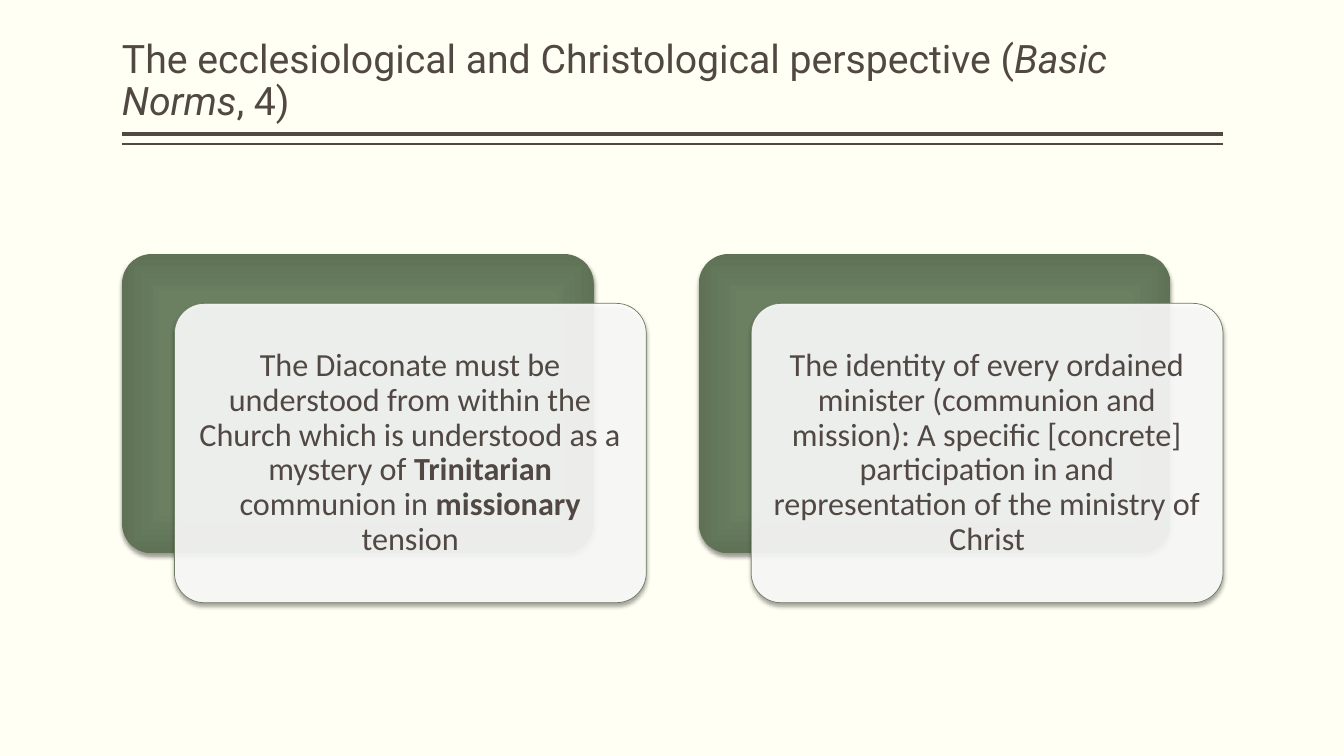
"""Build the slide on the ecclesiological and Christological perspective."""
from lxml import etree
from pptx import Presentation
from pptx.dml.color import RGBColor
from pptx.enum.shapes import MSO_CONNECTOR, MSO_SHAPE
from pptx.enum.text import MSO_ANCHOR, PP_ALIGN
from pptx.oxml import parse_xml
from pptx.oxml.ns import nsdecls, qn
from pptx.util import Inches, Pt

INK, PAPER, WHITE, EDGE = "514843", "FFFFF3", "FFFFFF", "6D7D66"
GREEN_STOPS = [(0, "6B8162"), (71, "6A8061"), (100, "5F7256")]
TITLE = [("The ecclesiological and Christological perspective (", ""),
         ("Basic Norms", "i"), (", 4)", "")]
CARDS = [
    [("The Diaconate must be understood from within the Church which is "
      "understood as a mystery of ", ""), ("Trinitarian", "b"),
     (" communion in ", ""), ("missionary", "b"), (" tension", "")],
    [("The identity of every ordained minister (communion and mission): "
      "A specific [concrete] participation in and representation of the "
      "ministry of Christ", "")],
]
RULES = [(1.33, 3), (1.43, 1)]
LEFT, WIDTH = 1.21, 10.92
CARD_W, CARD_H, CARD_TOP, CARD_STEP = 4.68, 2.97, 2.52, 5.72
SHIFT_X, SHIFT_Y, PAD = 0.52, 0.49, 0.09


def rgb(code):
    return RGBColor.from_string(code)


def add_text(slide, box, runs, font, size, anchor, align, insets):
    tf = slide.shapes.add_textbox(*map(Inches, box)).text_frame
    tf.word_wrap = True
    tf.vertical_anchor = anchor
    tf.margin_left = tf.margin_right = Inches(insets[0])
    tf.margin_top = tf.margin_bottom = Inches(insets[1])
    p = tf.paragraphs[0]
    p.alignment, p.line_spacing = align, 0.9
    p.font.name, p.font.size = font, Pt(size)
    p.font.color.rgb = rgb(INK)
    for text, style in runs:
        r = p.add_run()
        r.text = text
        if style == "b":
            r.font.bold = True
        elif style == "i":
            r.font.italic = True


def add_panel(slide, x, y):
    sp = slide.shapes.add_shape(MSO_SHAPE.ROUNDED_RECTANGLE, Inches(x),
                                Inches(y), Inches(CARD_W), Inches(CARD_H))
    sp.adjustments[0] = 0.1
    sp.shadow.inherit = False
    effects = sp._element.spPr.find(qn("a:effectLst"))
    effects.append(parse_xml(
        f'<a:outerShdw {nsdecls("a")} blurRad="{Pt(3.1)}" dist="{Pt(2)}" '
        'dir="5400000" rotWithShape="0"><a:srgbClr val="000000">'
        '<a:alpha val="38000"/></a:srgbClr></a:outerShdw>'))
    return sp


def add_back(slide, x, y):
    sp = add_panel(slide, x, y)
    sp.line.fill.background()
    sp.fill.gradient()
    stops = "".join(f'<a:gs pos="{pos * 1000}"><a:srgbClr val="{code}"/></a:gs>'
                    for pos, code in GREEN_STOPS)
    spPr = sp._element.spPr
    spPr.replace(spPr.find(qn("a:gradFill")), parse_xml(
        f'<a:gradFill {nsdecls("a")} rotWithShape="1"><a:gsLst>{stops}</a:gsLst>'
        '<a:path path="rect"><a:fillToRect l="50000" t="50000" r="50000" '
        'b="50000"/></a:path></a:gradFill>'))


def add_front(slide, x, y):
    sp = add_panel(slide, x, y)
    sp.fill.solid()
    sp.fill.fore_color.rgb = rgb(WHITE)
    color = sp._element.spPr.find(qn("a:solidFill")).find(qn("a:srgbClr"))
    etree.SubElement(color, qn("a:alpha")).set("val", "90000")
    sp.line.color.rgb = rgb(EDGE)
    sp.line.width = Pt(0.5)


def add_rule(slide, y, width):
    line = slide.shapes.add_connector(MSO_CONNECTOR.STRAIGHT, Inches(LEFT),
                                      Inches(y), Inches(LEFT + WIDTH), Inches(y))
    line.line.color.rgb = rgb(INK)
    line.line.width = Pt(width)
    etree.SubElement(line._element.spPr, qn("a:effectLst"))


def main():
    prs = Presentation()
    prs.slide_width, prs.slide_height = Inches(13.33), Inches(7.5)
    slide = prs.slides.add_slide(prs.slide_layouts[6])
    slide.background.fill.solid()
    slide.background.fill.fore_color.rgb = rgb(PAPER)
    for y, width in RULES:
        add_rule(slide, y, width)
    add_text(slide, (LEFT, 0.08, WIDTH, 1.2), TITLE, "Roboto", 28,
             MSO_ANCHOR.BOTTOM, PP_ALIGN.LEFT, (0, 0.05))
    for i, runs in enumerate(CARDS):
        x = LEFT + i * CARD_STEP
        front_x, front_y = x + SHIFT_X, CARD_TOP + SHIFT_Y
        add_back(slide, x, CARD_TOP)
        add_front(slide, front_x, front_y)
        box = (front_x + PAD, front_y + PAD, CARD_W - 2 * PAD, CARD_H - 2 * PAD)
        add_text(slide, box, runs, "Calibri", 23, MSO_ANCHOR.MIDDLE,
                 PP_ALIGN.CENTER, (0.1, 0.1))
    prs.save("out.pptx")


if __name__ == "__main__":
    main()
